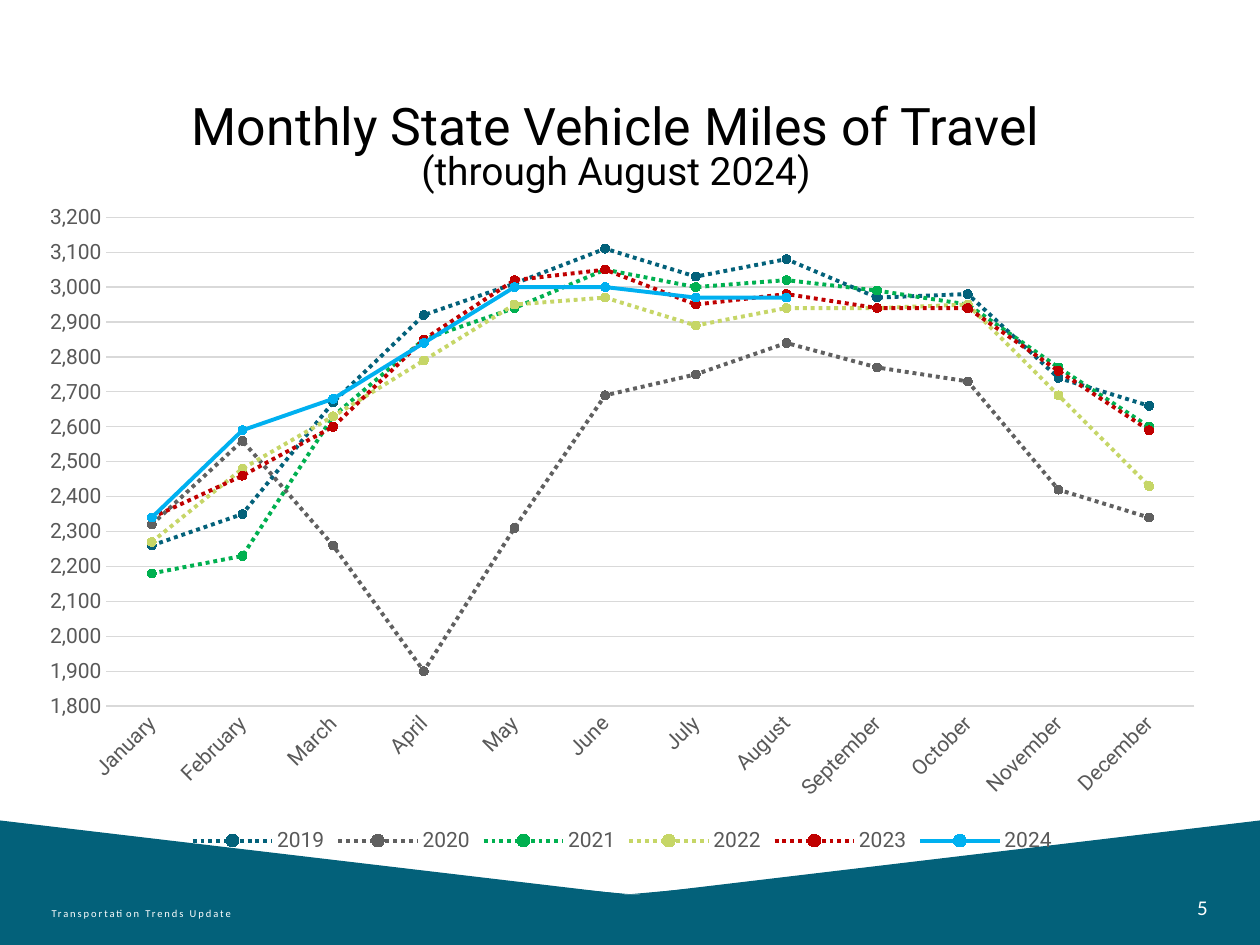
from dataclasses import dataclass

from pptx import Presentation
from pptx.chart.data import CategoryChartData as Data
from pptx.dml.color import RGBColor as Rgb
from pptx.enum.chart import XL_CHART_TYPE as Kind, XL_LEGEND_POSITION as Spot
from pptx.enum.chart import XL_MARKER_STYLE as Mark, XL_TICK_MARK as Tick
from pptx.enum.dml import MSO_LINE
from pptx.enum.text import MSO_ANCHOR as Anchor, MSO_AUTO_SIZE as Fit, PP_ALIGN as Align
from pptx.oxml.ns import qn
from pptx.util import Cm, Pt


@dataclass(frozen=True)
class Theme:
    """Colours, fonts and type sizes of the slide."""
    teal: str = "03617A"
    black: str = "000000"
    white: str = "FFFFFF"
    grey: str = "595959"
    rule: str = "D9D9D9"
    face: str = "Roboto"
    small: str = "Calibri"
    head: float = 29.6
    sub: float = 22.2
    label: float = 12
    foot: float = 6


THEME = Theme()
WIDTH = 25.4
BAND = [(0, 16.54), (12.6, 18.03), (12.88, 18.03), (WIDTH, 16.54), (WIDTH, 19.05), (0, 19.05)]
WEDGE = [(0, 18.06), (12.73, 18.03), (0.03, 16.89)]
MONTHS = ["January", "February", "March", "April", "May", "June", "July",
          "August", "September", "October", "November", "December"]
MILES = {
    "2019": (THEME.teal, [2260, 2350, 2670, 2920, 3010, 3110, 3030, 3080, 2970, 2980, 2740, 2660]),
    "2020": ("606060", [2320, 2560, 2260, 1900, 2310, 2690, 2750, 2840, 2770, 2730, 2420, 2340]),
    "2021": ("00B050", [2180, 2230, 2630, 2850, 2940, 3050, 3000, 3020, 2990, 2950, 2770, 2600]),
    "2022": ("C6D667", [2270, 2480, 2630, 2790, 2950, 2970, 2890, 2940, 2940, 2950, 2690, 2430]),
    "2023": ("C00000", [2340, 2460, 2600, 2850, 3020, 3050, 2950, 2980, 2940, 2940, 2760, 2590]),
    "2024": ("00B0F0", [2340, 2590, 2680, 2840, 3000, 3000, 2970, 2970] + [None] * 4),
}


def style(font, size, color, face=THEME.face):
    """Set size, colour and face of a font."""
    font.size, font.name = Pt(size), face
    font.color.rgb = Rgb.from_string(color)


def add_shape(slide, points):
    """Draw a closed teal outline through points in centimetres."""
    start, *rest = [(Cm(x), Cm(y)) for x, y in points]
    pen = slide.shapes.build_freeform(*start)
    pen.add_line_segments(rest)
    shape = pen.convert_to_shape()
    shape.shadow.inherit = False
    shape.fill.solid()
    shape.fill.fore_color.rgb = Rgb.from_string(THEME.teal)
    shape.line.fill.background()


def add_foot(slide, text, left, width, size, align):
    """Add a spaced white text to the footer band."""
    frame = slide.shapes.add_textbox(Cm(left), Cm(17.65), Cm(width), Cm(1.02)).text_frame
    frame.word_wrap, frame.vertical_anchor = True, Anchor.BOTTOM
    frame.margin_left = frame.margin_right = 0
    para = frame.paragraphs[0]
    para.alignment = align
    run = para.add_run()
    run.text = text
    style(run.font, size, THEME.white, THEME.small)
    run._r.get_or_add_rPr().set("spc", "110")


def add_title(slide, lines):
    """Fill the title placeholder with centred lines of given sizes."""
    title = slide.shapes.title
    title.left, title.top, title.width, title.height = Cm(1.47), Cm(1.9), Cm(21.9), Cm(2.11)
    frame = title.text_frame
    frame.word_wrap, frame.auto_size = True, Fit.NONE
    frame.vertical_anchor = Anchor.BOTTOM
    for i, (text, size) in enumerate(lines):
        para = frame.add_paragraph() if i else frame.paragraphs[0]
        para.alignment, para.line_spacing = Align.CENTER, 0.8
        para.space_before = Pt(0)
        run = para.add_run()
        run.text = text
        style(run.font, size, THEME.black)


def style_axes(chart):
    """Format both axes and the gridlines."""
    months, miles = chart.category_axis, chart.value_axis
    for axis in (months, miles):
        axis.major_tick_mark = axis.minor_tick_mark = Tick.NONE
        style(axis.tick_labels.font, THEME.label, THEME.grey)
    miles.minimum_scale, miles.maximum_scale, miles.major_unit = 1800, 3200, 100
    miles.tick_labels.number_format = "#,##0"
    miles.tick_labels.number_format_is_linked = False
    miles.format.line.fill.background()
    for line in (months.format.line, miles.major_gridlines.format.line):
        line.width = Pt(0.75)
        line.color.rgb = Rgb.from_string(THEME.rule)
    turn = months._element.find(qn("c:txPr")).find(qn("a:bodyPr"))
    turn.set("rot", "-2700000")


def style_line(line, color, dotted):
    """Format one series and its round markers."""
    tone = Rgb.from_string(color)
    line.smooth = False
    line.format.line.width = Pt(2.25)
    line.format.line.color.rgb = tone
    if dotted:
        line.format.line.dash_style = MSO_LINE.ROUND_DOT
    dot = line.marker
    dot.style, dot.size = Mark.CIRCLE, 5
    dot.format.fill.solid()
    dot.format.fill.fore_color.rgb = tone
    dot.format.line.color.rgb = tone


def add_lines(slide):
    """Add the line chart of monthly miles by year."""
    data = Data(number_format="#,##0")
    data.categories = MONTHS
    for year, (_, vals) in MILES.items():
        data.add_series(year, vals)
    chart = slide.shapes.add_chart(
        Kind.LINE_MARKERS, Cm(0.53), Cm(3.86), Cm(24.03), Cm(13.44), data).chart
    chart.has_title = False
    style(chart.font, 10, THEME.black)
    chart.has_legend = True
    chart.legend.position, chart.legend.include_in_layout = Spot.BOTTOM, False
    style(chart.legend.font, THEME.label, THEME.grey)
    chart.plots[0].vary_by_categories = False
    style_axes(chart)
    for line in chart.plots[0].series:
        style_line(line, MILES[line.name][0], line.name != "2024")


def main():
    """Build and save the slide."""
    deck = Presentation()
    deck.slide_width, deck.slide_height = Cm(WIDTH), Cm(19.05)
    slide = deck.slides.add_slide(deck.slide_layouts[5])
    for points in (BAND, WEDGE, [(WIDTH - x, y) for x, y in WEDGE]):
        add_shape(slide, points)
    add_foot(slide, "Transportation Trends Update", 1.04, 6.78, THEME.foot, Align.LEFT)
    add_foot(slide, "5", 21.89, 2.46, THEME.label, Align.RIGHT)
    add_lines(slide)
    add_title(slide, [("Monthly State Vehicle Miles of Travel", THEME.head),
                      ("(through August 2024)", THEME.sub)])
    deck.save("out.pptx")


if __name__ == "__main__":
    main()
